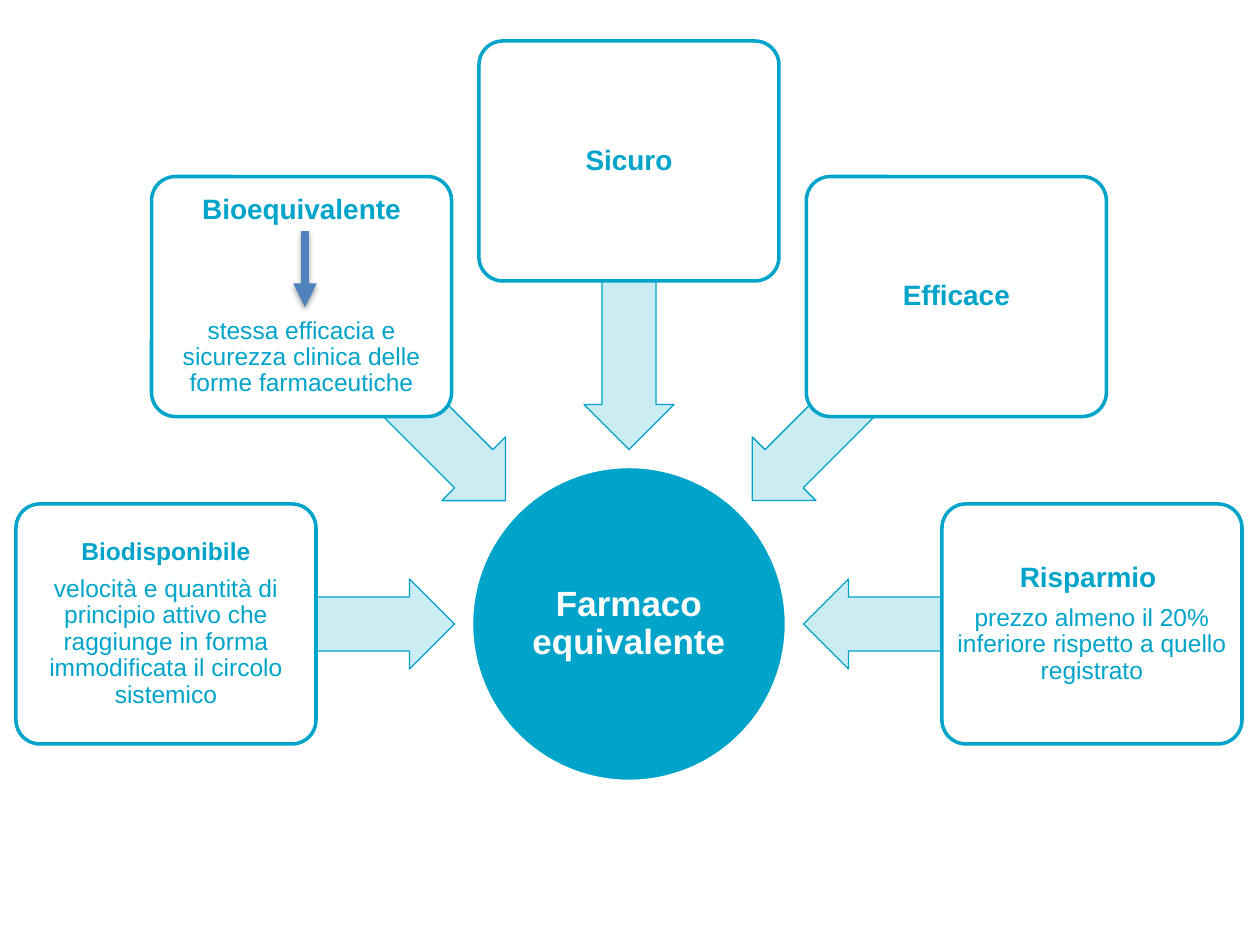
from math import cos, sin, radians
from lxml import etree
from pptx import Presentation
from pptx import util as u
from pptx.dml.color import RGBColor
from pptx.enum import shapes, text
from pptx.oxml import ns

TEAL = RGBColor(0x00, 0xA4, 0xCA)
WHITE = RGBColor(0xFF, 0xFF, 0xFF)
BLUE = RGBColor(0x4F, 0x81, 0xBD)
KIND = shapes.MSO_SHAPE
MID_X, MID_Y = 629, 624


def px(n):
    return u.Emu(round(n * 914400 / 126))


def add(kind, x, y, w, h, fill, line, width, pad=0, paras=()):
    shape = deck.add_shape(kind, px(x - w / 2), px(y - h / 2), px(w), px(h))
    shape.shadow.inherit = False
    shape.fill.solid()
    shape.fill.fore_color.rgb = fill
    shape.line.color.rgb = line
    shape.line.width = u.Pt(width)
    frame = shape.text_frame
    frame.word_wrap = True
    frame.vertical_anchor = text.MSO_ANCHOR.MIDDLE
    frame.margin_left = frame.margin_right = px(pad)
    frame.margin_top = frame.margin_bottom = px(pad)
    for i, (words, size, bold, color, gap) in enumerate(paras):
        para = frame.add_paragraph() if i else frame.paragraphs[0]
        para.text = words
        para.alignment = text.PP_ALIGN.CENTER
        para.line_spacing = 0.9
        para.space_before = u.Pt(gap)
        font = para.runs[0].font
        font.name = "Arial"
        font.size = u.Pt(size)
        font.bold = bold
        font.color.rgb = color
    return shape


prs = Presentation()
prs.slide_width, prs.slide_height = px(1260), px(945)
deck = prs.slides.add_slide(prs.slide_layouts[6]).shapes

add(KIND.OVAL, MID_X, MID_Y, 315, 315, TEAL, WHITE, 2, 2,
    [("Farmaco equivalente", 20, True, WHITE, 0)])

cards = [
    ("Biodisponibile", 14, 5.6, "velocità e quantità di principio attivo che "
     "raggiunge in forma immodificata il circolo sistemico"),
    ("Bioequivalente", 16, 52.5, "stessa efficacia e sicurezza clinica delle "
     "forme farmaceutiche"),
    ("Sicuro", 16, 0, ""),
    ("Efficace", 16, 0, ""),
    ("Risparmio ", 16, 6.4, "prezzo almeno il 20% inferiore rispetto a quello "
     "registrato"),
]
for i, (head, size, gap, body) in enumerate(cards):
    turn = 180 + 45 * i
    dx, dy = cos(radians(turn)), sin(radians(turn))
    arrow = add(KIND.LEFT_ARROW, MID_X + 319 * dx, MID_Y + 319 * dy,
                289, 90, TEAL, TEAL, 0.75)
    arrow.rotation = turn % 360
    arrow.adjustments[0], arrow.adjustments[1] = 0.6, 0.5
    tint = arrow._element.spPr.find(ns.qn("a:solidFill"))[0]
    etree.SubElement(tint, ns.qn("a:alpha"), val="20000")

    paras = [(head, size, True, TEAL, 0)]
    if body:
        paras.append((body, 14, False, TEAL, gap))
    card = add(KIND.ROUNDED_RECTANGLE, MID_X + 463 * dx, MID_Y + 463 * dy,
               300, 240, WHITE, TEAL, 2, 4, paras)
    card.adjustments[0] = 0.1

down = deck.add_connector(shapes.MSO_CONNECTOR.STRAIGHT,
                          px(305), px(231), px(305), px(307))
down.line.color.rgb = BLUE
down.line.width = u.Pt(4.5)
etree.SubElement(down.line._get_or_add_ln(), ns.qn("a:tailEnd"), type="triangle")

prs.save("out.pptx")
